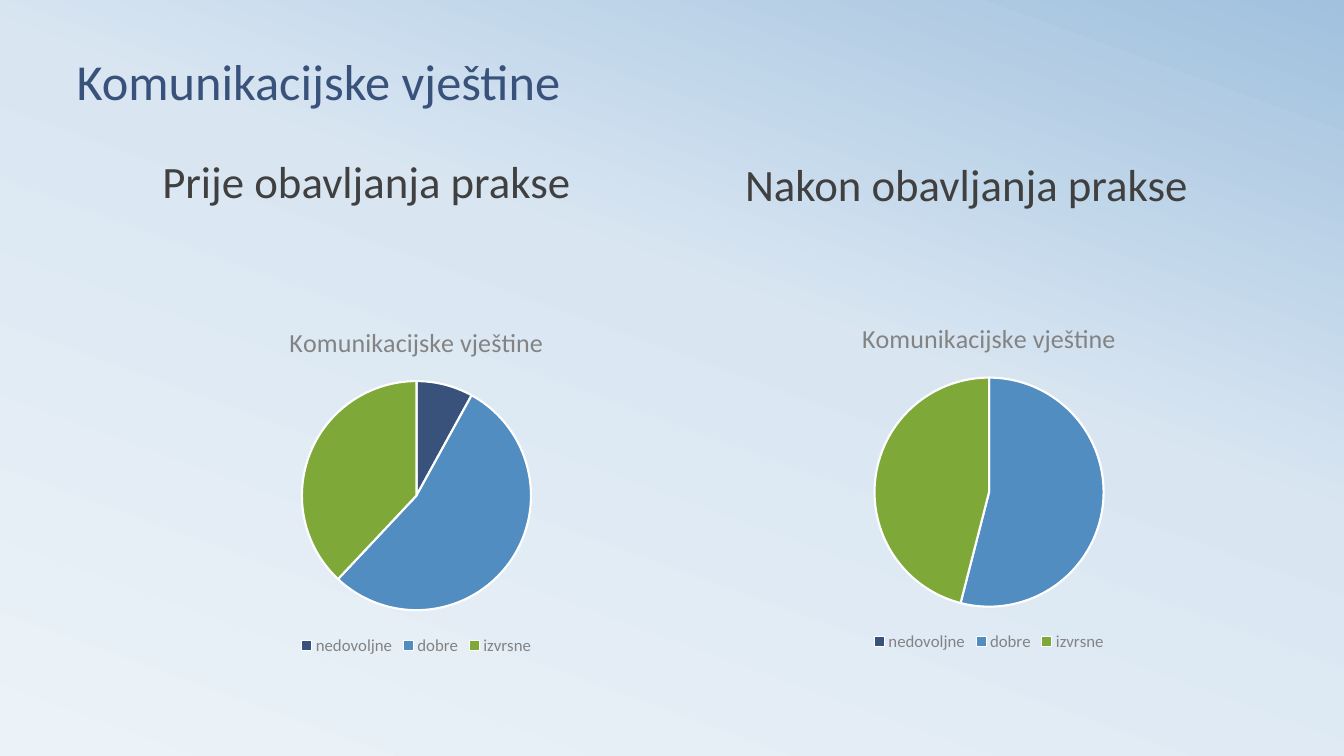
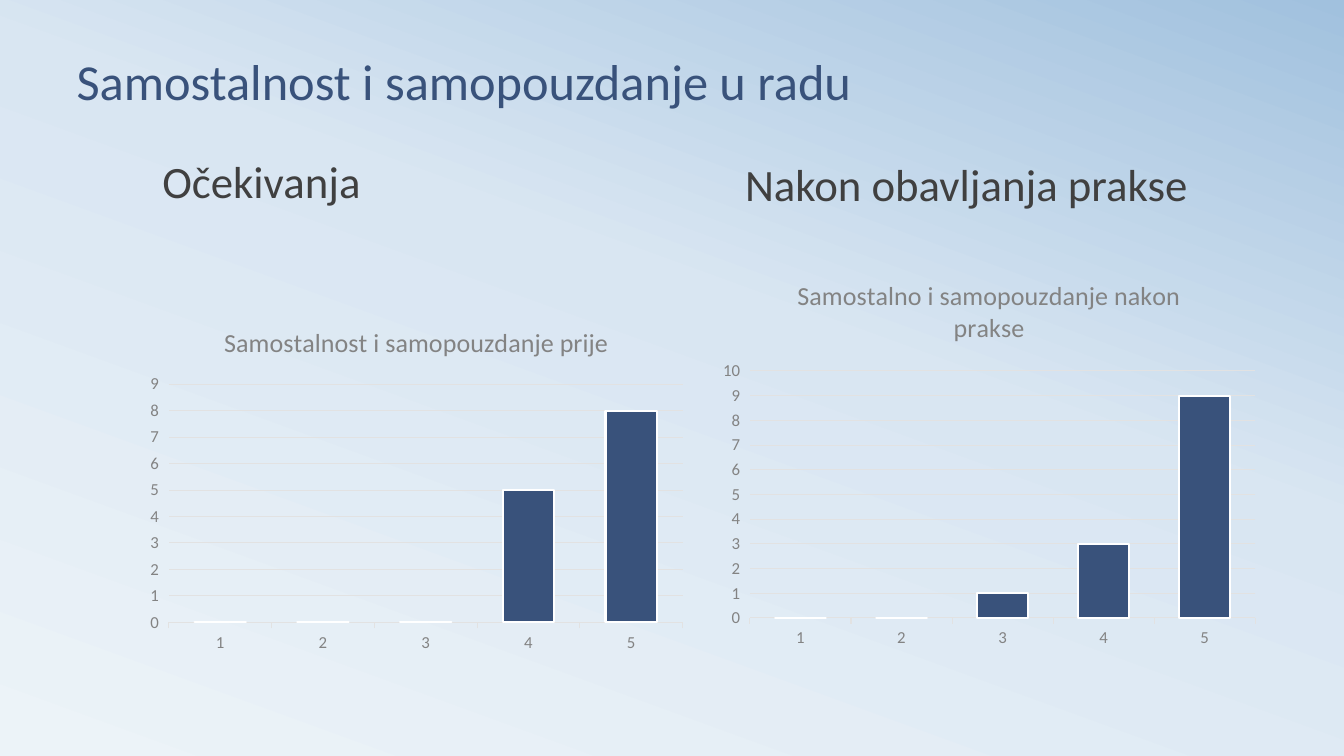
import copy

import pptx
import pptx.chart.data
import pptx.dml.color
import pptx.enum.chart
import pptx.enum.text
import pptx.oxml
import pptx.oxml.ns
import pptx.util

Pt = pptx.util.Pt
qn = pptx.oxml.ns.qn
chart_types = pptx.enum.chart.XL_CHART_TYPE
anchors = pptx.enum.text.MSO_ANCHOR

FONT = "Calibri"
COLORS = {
    "navy": "39527B", "blue": "528DC2", "green": "7EA939",
    "text": "404040", "label": "838383", "grid": "E2E2E2", "white": "FFFFFF",
    "light": "ECF3F8", "middle": "D9E6F2", "dark": "A1C1DE",
}


def rgb(name):
    return pptx.dml.color.RGBColor.from_string(COLORS[name])


def add_run(text_frame, text, size, color):
    """Add one run in the first paragraph and return the paragraph."""
    paragraph = text_frame.paragraphs[0]
    run = paragraph.add_run()
    run.text = text
    run.font.name = FONT
    run.font.size = Pt(size)
    run.font.bold = False
    run.font.color.rgb = rgb(color)
    return paragraph


# Slide content: title, then heading, chart title and values, left and right
PIE_LABELS = ["nedovoljne", "dobre", "izvrsne"]
GRADES = ["1", "2", "3", "4", "5"]
slides = [
    ("Komunikacijske vještine", chart_types.PIE, PIE_LABELS, [
        ("Prije obavljanja prakse", "Komunikacijske vještine", [8, 54, 38]),
        ("Nakon obavljanja prakse", "Komunikacijske vještine", [0, 54, 46]),
    ]),
    ("Samostalnost i samopouzdanje u radu", chart_types.COLUMN_CLUSTERED, GRADES, [
        ("Očekivanja", "Samostalnost i samopouzdanje prije", [0, 0, 0, 5, 8]),
        ("Nakon obavljanja prakse", "Samostalno i samopouzdanje nakon prakse",
         [0, 0, 1, 3, 9]),
    ]),
]

# Placeholder boxes: left, top, width, height, left inset
TITLE_BOX = (47.5, -2, 864, 84, 7.2)
HEADING_BOXES = [(101.5, 94.5, 396, 73.5, 14.4), (525, 94.5, 396, 77.5, 7.2)]
# Chart boxes: left, top, bottom
CHART_BOXES = {
    chart_types.PIE: [(99.5, 219, 471), (508.5, 216.5, 468.5)],
    chart_types.COLUMN_CLUSTERED: [(99.5, 219, 471), (508.5, 185, 468.5)],
}
CHART_WIDTH = 396

presentation = pptx.Presentation()
presentation.slide_width = Pt(960)
presentation.slide_height = Pt(540)

# Shared gradient background
master = presentation.slide_master
fill = master.background.fill
fill.gradient()
fill.gradient_angle = 70
stop_list = master.element.find(".//" + qn("a:gsLst"))
stop_list.insert(1, copy.deepcopy(stop_list[0]))
for stop, position, color in zip(fill.gradient_stops, (0, 0.58, 1),
                                 ("light", "middle", "dark")):
    stop.position = position
    stop.color.rgb = rgb(color)

layout = presentation.slide_layouts.get_by_name("Comparison")

for title, chart_type, categories, columns in slides:
    slide = presentation.slides.add_slide(layout)
    placeholders = {shape.placeholder_format.idx: shape for shape in slide.placeholders}
    for index in (2, 4):
        placeholders[index].element.getparent().remove(placeholders[index].element)

    # Title and the two headings
    texts = [(placeholders[0], title, TITLE_BOX, 36, "navy", anchors.BOTTOM, 0.8)]
    for index, box, column in zip((1, 3), HEADING_BOXES, columns):
        texts.append((placeholders[index], column[0], box, 32, "text", anchors.MIDDLE, 0.9))
    for shape, text, box, size, color, anchor, line_spacing in texts:
        shape.left, shape.top, shape.width, shape.height = map(Pt, box[:4])
        text_frame = shape.text_frame
        text_frame.margin_left = Pt(box[4])
        text_frame.word_wrap = True
        text_frame.auto_size = pptx.enum.text.MSO_AUTO_SIZE.NONE
        text_frame.vertical_anchor = anchor
        paragraph = add_run(text_frame, text, size, color)
        paragraph.alignment = pptx.enum.text.PP_ALIGN.LEFT
        paragraph.line_spacing = line_spacing
        paragraph.space_before = Pt(0)

    # Charts
    for (left, top, bottom), column in zip(CHART_BOXES[chart_type], columns):
        heading, chart_title, values = column
        data = pptx.chart.data.CategoryChartData()
        data.categories = categories
        data.add_series(chart_title, values)
        chart = slide.shapes.add_chart(chart_type, Pt(left), Pt(top), Pt(CHART_WIDTH),
                                       Pt(bottom - top), data).chart
        chart.font.name = FONT
        chart.font.size = Pt(10)
        chart.font.color.rgb = rgb("text")
        # Transparent chart area
        chart.element.find(qn("c:txPr")).addprevious(pptx.oxml.parse_xml(
            f'<c:spPr {pptx.oxml.ns.nsdecls("c", "a")}>'
            "<a:noFill/><a:ln><a:noFill/></a:ln></c:spPr>"))

        chart.has_title = True
        chart.chart_title.include_in_layout = False
        add_run(chart.chart_title.text_frame, chart_title, 18.6, "label")

        plot = chart.plots[0]
        series = plot.series[0]
        label_fonts = []
        if chart_type == chart_types.PIE:
            plot.vary_by_categories = True
            formats = []
            for index, color in enumerate(("navy", "blue", "green")):
                formats.append((series.points[index].format, color))
            chart.has_legend = True
            chart.legend.position = pptx.enum.chart.XL_LEGEND_POSITION.BOTTOM
            chart.legend.include_in_layout = False
            label_fonts.append(chart.legend.font)
        else:
            plot.vary_by_categories = False
            plot.gap_width = 100
            formats = [(series.format, "navy")]
            chart.has_legend = False
            for axis in (chart.category_axis, chart.value_axis):
                axis.major_tick_mark = pptx.enum.chart.XL_TICK_MARK.OUTSIDE
                label_fonts.append(axis.tick_labels.font)
            value_axis = chart.value_axis
            value_axis.minimum_scale = 0
            value_axis.maximum_scale = max(values) + 1
            value_axis.major_unit = 1
            value_axis.format.line.fill.background()
            for line in (chart.category_axis.format.line,
                         value_axis.major_gridlines.format.line):
                line.color.rgb = rgb("grid")
                line.width = Pt(0.75)

        for part, color in formats:
            part.fill.solid()
            part.fill.fore_color.rgb = rgb(color)
            part.line.color.rgb = rgb("white")
            part.line.width = Pt(1.5)
        for font in label_fonts:
            font.name = FONT
            font.size = Pt(12)
            font.color.rgb = rgb("label")

presentation.save("out.pptx")
